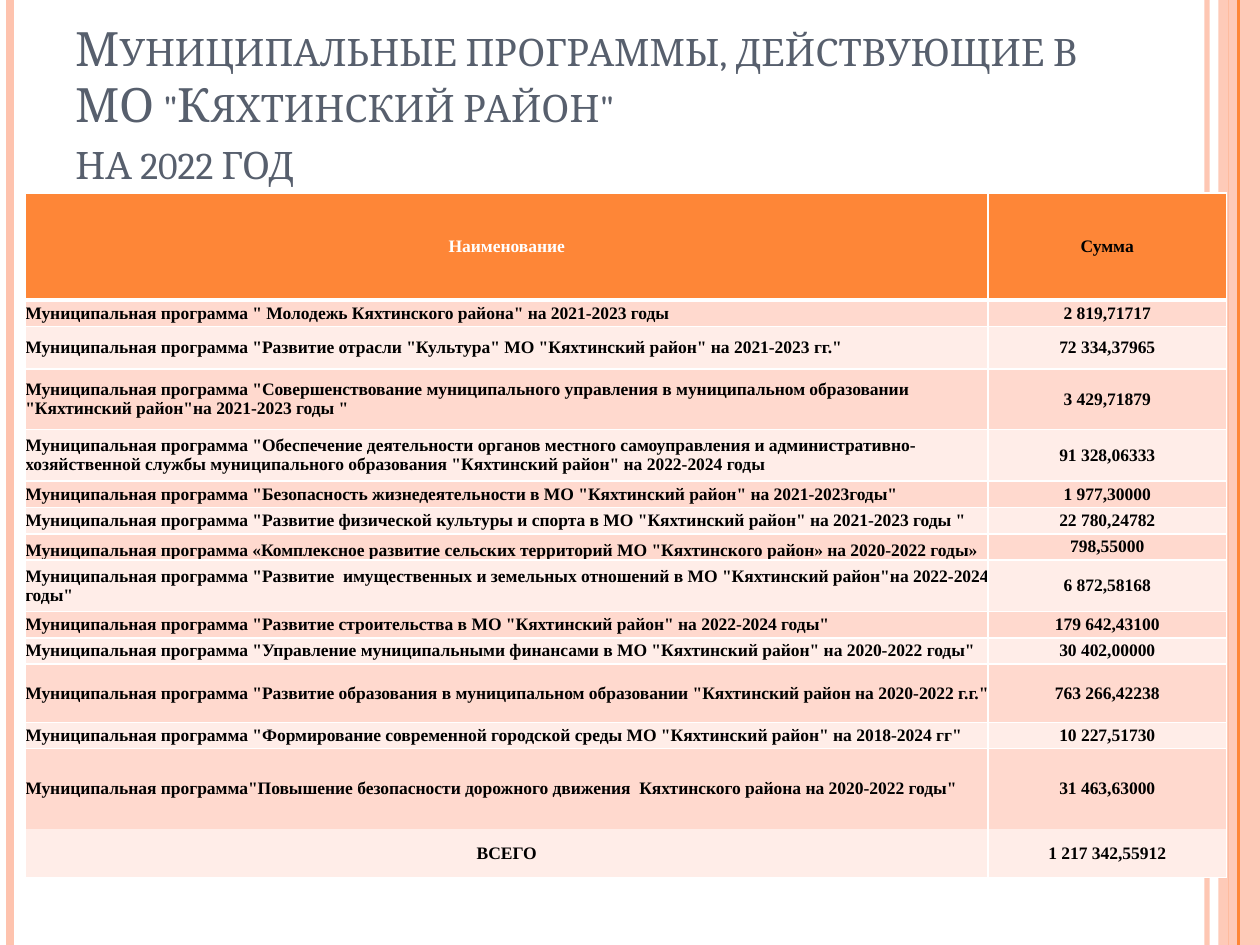
import pptx
import pptx.dml.color
import pptx.enum.shapes
import pptx.enum.text
import pptx.oxml
import pptx.oxml.ns
import pptx.util
import lxml.etree

Cm, Pt = pptx.util.Cm, pptx.util.Pt
RGB = pptx.dml.color.RGBColor.from_string
ANCHOR = pptx.enum.text.MSO_ANCHOR
ALIGN = pptx.enum.text.PP_ALIGN
qn = pptx.oxml.ns.qn

COLORS = {
    "accent": "FE8637", "stripe": "FEC3AE", "title": "575F6D",
    "odd": "FFD9CE", "even": "FFEDE8", "white": "FFFFFF", "black": "000000",
}


def set_alpha(owner, percent):
    for color in owner.iter(qn("a:srgbClr")):
        lxml.etree.SubElement(color, qn("a:alpha")).set("val", str(percent * 1000))


def add_border(cell, side, width):
    paint = f'<a:solidFill><a:srgbClr val="{COLORS["white"]}"/></a:solidFill>' if width else "<a:noFill/>"
    cell._tc.get_or_add_tcPr().append(pptx.oxml.parse_xml(
        f'<a:ln{side} xmlns:a="http://schemas.openxmlformats.org/drawingml/2006/main" '
        f'w="{Pt(width)}">{paint}</a:ln{side}>'))


deck = pptx.Presentation()
deck.slide_width, deck.slide_height = Cm(25.4), Cm(19.05)
slide = deck.slides.add_slide(deck.slide_layouts[6])

# Side band and vertical stripes: x, colour, width, opacity
band = slide.shapes.add_shape(
    pptx.enum.shapes.MSO_SHAPE.RECTANGLE, Cm(24.56), 0, Cm(0.84), deck.slide_height)
band.shadow.inherit = False
band.fill.solid()
band.fill.fore_color.rgb = RGB(COLORS["stripe"])
band.line.fill.background()
set_alpha(band._element.spPr, 87)

stripes = [
    (24.33, "stripe", 3, 93),
    (0.21, "stripe", 4.5, 100),
    (24.97, "accent", 1.5, 100),
    (24.77, "accent", 0.75, 100),
]
for x, color, width, opacity in stripes:
    stripe = slide.shapes.add_connector(
        pptx.enum.shapes.MSO_CONNECTOR.STRAIGHT, Cm(x), 0, Cm(x), deck.slide_height)
    stripe.line.color.rgb = RGB(COLORS[color])
    stripe.line.width = Pt(width)
    if opacity < 100:
        set_alpha(stripe._element.spPr, opacity)
    lxml.etree.SubElement(stripe._element.spPr, qn("a:effectLst"))
    if color == "accent" and width < 1:
        # The thin stripe lies behind the translucent band
        band._element.addprevious(stripe._element)

# Title in small capitals
title = slide.shapes.add_textbox(Cm(1.27), Cm(0.76), Cm(20.75), Cm(3.18)).text_frame
title.word_wrap = True
title.vertical_anchor = ANCHOR.BOTTOM
heading = title.paragraphs[0]
heading.text = 'Муниципальные программы, действующие в МО "Кяхтинский район" \vна 2022 год'
for run in heading.runs:
    for name, value in {"size": Pt(27), "name": "Cambria"}.items():
        setattr(run.font, name, value)
    run.font.color.rgb = RGB(COLORS["title"])
    run._r.get_or_add_rPr().set("cap", "small")

# Programmes: row height in cm, name, amount
PREFIX = "Муниципальная программа"
programs = [
    (2.16, "Наименование", "Сумма"),
    (0.53, PREFIX + ' " Молодежь Кяхтинского района" на 2021-2023 годы', "2 819,71717"),
    (0.86, PREFIX + ' "Развитие отрасли "Культура" МО "Кяхтинский район" на 2021-2023 гг."', "72 334,37965"),
    (1.22, PREFIX + ' "Совершенствование муниципального управления в муниципальном образовании  '
     '"Кяхтинский район"на 2021-2023 годы "', "3 429,71879"),
    (1.04, PREFIX + ' "Обеспечение деятельности органов местного самоуправления и '
     'административно-хозяйственной службы муниципального образования '
     '"Кяхтинский район" на 2022-2024 годы', "91 328,06333"),
    (0.53, PREFIX + ' "Безопасность жизнедеятельности в МО "Кяхтинский район" на 2021-2023годы"', "1 977,30000"),
    (0.53, PREFIX + ' "Развитие физической культуры и спорта в МО "Кяхтинский район" на 2021-2023 годы "',
     "22 780,24782"),
    (0.53, PREFIX + ' «Комплексное развитие сельских территорий МО "Кяхтинского район» на 2020-2022 годы»',
     "798,55000"),
    (1.04, PREFIX + ' "Развитие  имущественных и земельных отношений в МО "Кяхтинский район"на 2022-2024 годы"',
     "6 872,58168"),
    (0.53, PREFIX + ' "Развитие строительства в МО "Кяхтинский район" на 2022-2024 годы"', "179 642,43100"),
    (0.53, PREFIX + ' "Управление муниципальными финансами в МО "Кяхтинский район" на 2020-2022 годы"',
     "30 402,00000"),
    (1.17, PREFIX + ' "Развитие образования в муниципальном образовании "Кяхтинский район на 2020-2022 г.г."',
     "763 266,42238"),
    (0.53, PREFIX + ' "Формирование современной городской среды МО "Кяхтинский район" на 2018-2024 гг"',
     "10 227,51730"),
    (1.63, PREFIX + '"Повышение безопасности дорожного движения  Кяхтинского района на 2020-2022 годы"',
     "31 463,63000"),
    (0.97, "ВСЕГО", "1 217 342,55912"),
]
column_widths = [19.41, 4.8]
total_row = len(programs) - 1
rural_row = 7

# Table
table = slide.shapes.add_table(
    len(programs), len(column_widths), Cm(0.51), Cm(3.89),
    Cm(sum(column_widths)), Cm(sum(row[0] for row in programs))).table
for column, width in zip(table.columns, column_widths):
    column.width = Cm(width)

cell_format = {"margin_left": 0, "margin_right": 0, "margin_top": 0,
               "margin_bottom": 0, "vertical_anchor": ANCHOR.MIDDLE}
font_format = {"name": "Times New Roman", "size": Pt(10), "bold": True}
# Rule widths above and below each row: thick under the header, none above the total
rules = [1] * (len(programs) + 1)
rules[1], rules[total_row] = 3, 0

for r, (height, *texts) in enumerate(programs):
    table.rows[r].height = Cm(height)
    fill = "accent" if r == 0 else "odd" if r % 2 else "even"
    for c, text in enumerate(texts):
        cell = table.cell(r, c)
        for name, value in cell_format.items():
            setattr(cell, name, value)
        if (r, c) == (rural_row, 0):
            cell.vertical_anchor = ANCHOR.BOTTOM
        for side, width in {"L": 1, "R": 1, "T": rules[r], "B": rules[r + 1]}.items():
            add_border(cell, side, width)
        cell.fill.solid()
        cell.fill.fore_color.rgb = RGB(COLORS[fill])
        cell.text = text
        line = cell.text_frame.paragraphs[0]
        line.alignment = ALIGN.CENTER if c or r in (0, total_row) else ALIGN.LEFT
        font = line.runs[0].font
        for name, value in font_format.items():
            setattr(font, name, value)
        font.color.rgb = RGB(COLORS["white" if (r, c) == (0, 0) else "black"])

deck.save("out.pptx")
